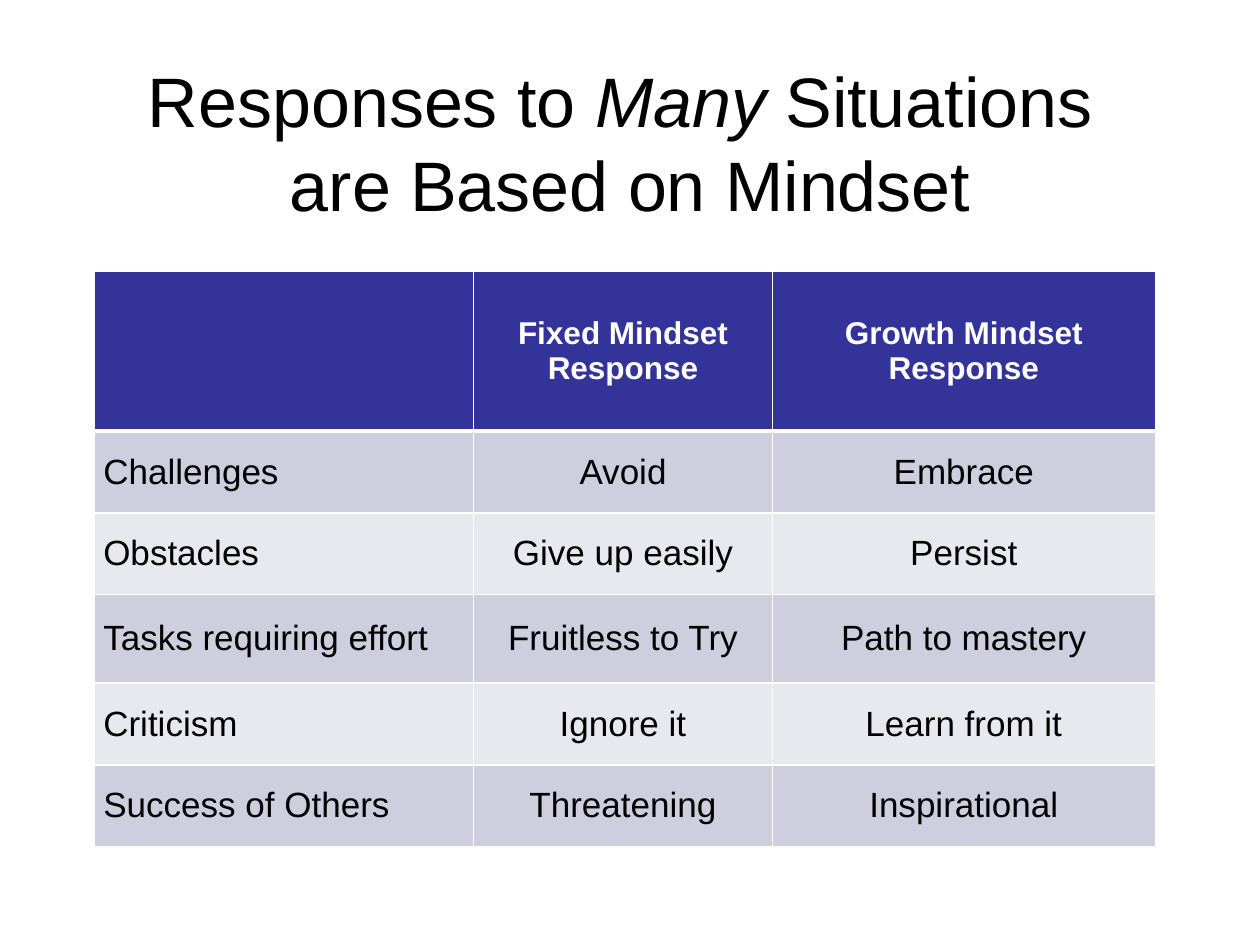
from lxml import etree
from pptx import Presentation
from pptx.dml.color import RGBColor
from pptx.enum.text import MSO_ANCHOR, PP_ALIGN
from pptx.oxml.ns import qn
from pptx.util import Inches, Pt

LEFT, CENTER = PP_ALIGN.LEFT, PP_ALIGN.CENTER
MIDDLE = MSO_ANCHOR.MIDDLE
TITLE_ONLY = 5
FONT = "Arial"
COLORS = {
    "text": "000000",
    "header": "333399",
    "header_text": "FFFFFF",
    "odd_row": "CECEDE",
    "even_row": "E8E8EF",
    "border": "FFFFFF",
}

TITLE_LINES = [
    [("Responses to ", False), ("Many", True), (" Situations ", False)],
    [("are Based on Mindset", False)],
]
ROWS = [
    ("", "Fixed Mindset Response", "Growth Mindset Response"),
    ("Challenges", "Avoid", "Embrace"),
    ("Obstacles", "Give up easily", "Persist"),
    ("Tasks requiring effort", "Fruitless to Try", "Path to mastery"),
    ("Criticism", "Ignore it", "Learn from it"),
    ("Success of Others", "Threatening", "Inspirational"),
]
COLUMN_WIDTHS = [3.01, 2.37, 3.04]
ROW_HEIGHTS = [1.27, 0.65, 0.65, 0.7, 0.65, 0.65]
TABLE_LEFT, TABLE_TOP = 0.75, 2.15


def add_run(paragraph, text, size, color, bold=False, italic=False):
    run = paragraph.add_run()
    run.text = text
    font = run.font
    font.name, font.size, font.bold, font.italic = FONT, Pt(size), bold, italic
    font.color.rgb = RGBColor.from_string(COLORS[color])


def add_borders(cell, top, bottom):
    properties = cell._tc.get_or_add_tcPr()
    for side, width in (("L", 1), ("R", 1), ("T", top), ("B", bottom)):
        line = etree.SubElement(properties, qn(f"a:ln{side}"), w=str(Pt(width)))
        fill = etree.SubElement(line, qn("a:solidFill"))
        etree.SubElement(fill, qn("a:srgbClr"), val=COLORS["border"])


def add_title(slide):
    title = slide.shapes.title
    title.left, title.top = Inches(0.5), Inches(0.5)
    title.width, title.height = Inches(9), Inches(1.25)
    frame = title.text_frame
    frame.vertical_anchor = MIDDLE
    paragraph = frame.paragraphs[0]
    paragraph.alignment = CENTER
    for index, line in enumerate(TITLE_LINES):
        if index:
            paragraph.add_line_break()
        for text, italic in line:
            add_run(paragraph, text, 40, "text", italic=italic)


def format_cell(cell, text, row, column):
    is_header = row == 0
    add_borders(cell, top=3 if row == 1 else 1, bottom=3 if is_header else 1)
    fill_name = "header" if is_header else "odd_row" if row % 2 else "even_row"
    cell.fill.solid()
    cell.fill.fore_color.rgb = RGBColor.from_string(COLORS[fill_name])
    cell.vertical_anchor = MIDDLE
    cell.margin_left = cell.margin_right = Inches(0.07)
    cell.margin_top = cell.margin_bottom = Inches(0.04)
    paragraph = cell.text_frame.paragraphs[0]
    paragraph.alignment = CENTER if column else LEFT
    if text:
        add_run(paragraph, text, 18 if is_header else 20,
                "header_text" if is_header else "text", bold=is_header)


def add_mindset_table(slide):
    table = slide.shapes.add_table(
        len(ROWS), len(COLUMN_WIDTHS), Inches(TABLE_LEFT), Inches(TABLE_TOP),
        Inches(sum(COLUMN_WIDTHS)), Inches(sum(ROW_HEIGHTS))).table
    for column, width in zip(table.columns, COLUMN_WIDTHS):
        column.width = Inches(width)
    for row, height in zip(table.rows, ROW_HEIGHTS):
        row.height = Inches(height)
    for row, texts in enumerate(ROWS):
        for column, text in enumerate(texts):
            format_cell(table.cell(row, column), text, row, column)


def main():
    presentation = Presentation()
    presentation.slide_width, presentation.slide_height = Inches(10), Inches(7.5)
    slide = presentation.slides.add_slide(presentation.slide_layouts[TITLE_ONLY])
    add_title(slide)
    add_mindset_table(slide)
    presentation.save("out.pptx")


if __name__ == "__main__":
    main()
